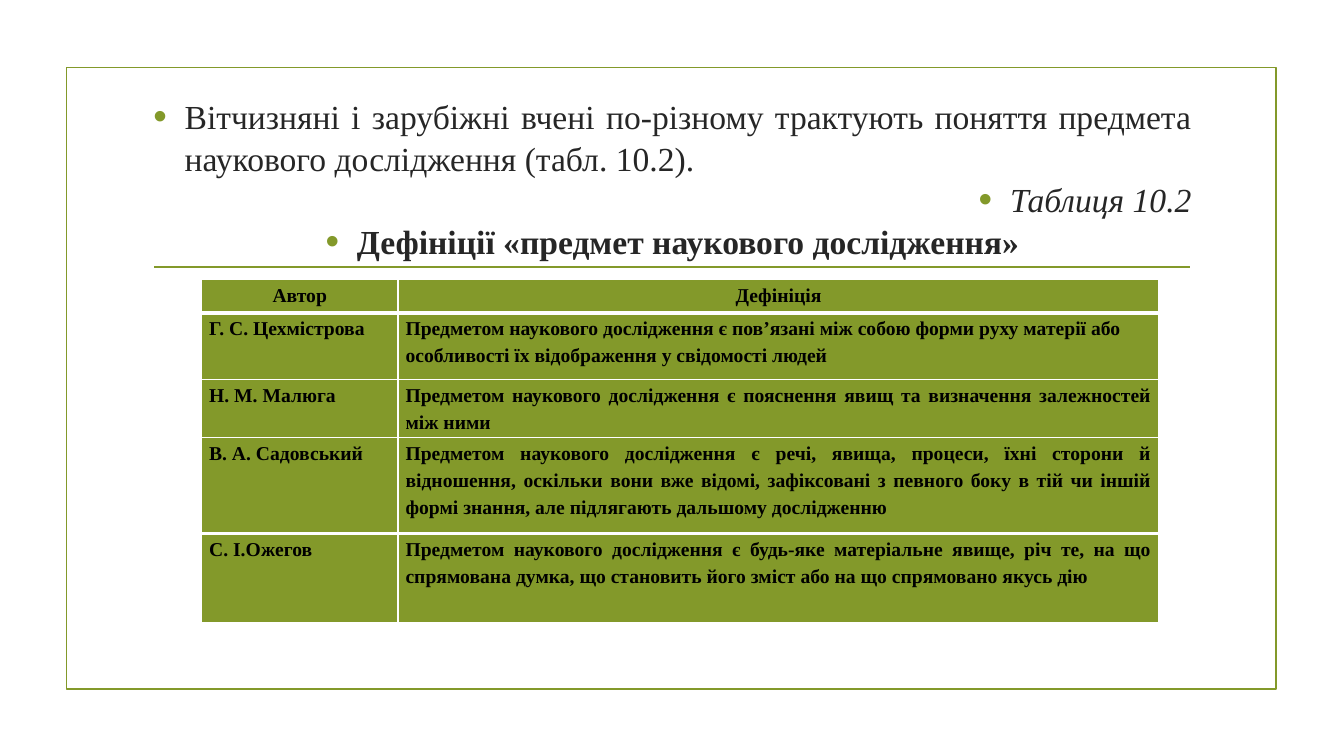
import pptx
import pptx.util
import pptx.dml.color
from lxml import etree
from pptx.enum.shapes import MSO_CONNECTOR, MSO_SHAPE
from pptx.enum.text import MSO_ANCHOR, MSO_AUTO_SIZE, PP_ALIGN
from pptx.oxml.ns import qn

Cm, Pt, RGBColor = pptx.util.Cm, pptx.util.Pt, pptx.dml.color.RGBColor

FONT = "Times New Roman"
OLIVE = RGBColor(0x83, 0x99, 0x2A)
DARK = RGBColor(0x26, 0x26, 0x26)
BLACK = RGBColor(0, 0, 0)
WHITE = RGBColor(255, 255, 255)

INTRO = [
    ("Вітчизняні і зарубіжні вчені по-різному трактують поняття предмета "
     "наукового дослідження (табл. 10.2).", PP_ALIGN.JUSTIFY, False, False),
    ("Таблиця 10.2", PP_ALIGN.RIGHT, False, True),
    ("Дефініції «предмет наукового дослідження»", PP_ALIGN.CENTER, True, False),
]
HEADER = ("Автор", "Дефініція")
DEFINITIONS = [
    ("Г. С. Цехмістрова",
     "Предметом наукового дослідження є пов’язані між собою форми руху матерії "
     "або особливості їх відображення у свідомості людей", PP_ALIGN.LEFT),
    ("Н. М. Малюга",
     "Предметом наукового дослідження є пояснення явищ та визначення "
     "залежностей між ними", PP_ALIGN.JUSTIFY),
    ("В. А. Садовський",
     "Предметом наукового дослідження є речі, явища, процеси, їхні сторони й "
     "відношення, оскільки вони вже відомі, зафіксовані з певного боку в тій чи "
     "іншій формі знання, але підлягають дальшому дослідженню", PP_ALIGN.JUSTIFY),
    ("С. І.Ожегов",
     "Предметом наукового дослідження є будь-яке матеріальне явище, річ те, на "
     "що спрямована думка, що становить його зміст або на що спрямовано якусь "
     "дію", PP_ALIGN.JUSTIFY),
]
COL_WIDTHS = (4.95, 19.18)
ROW_HEIGHTS = (0.84, 1.68, 1.47, 2.41, 2.26)


def format_runs(p, size, color, bold=False, italic=False):
    for r in p.runs:
        r.font.name = FONT
        r.font.size = Pt(size)
        r.font.color.rgb = color
        r.font.bold = bold
        r.font.italic = italic


def add_bullet(p):
    pPr = p._p.get_or_add_pPr()
    pPr.set("marL", str(Cm(0.79)))
    pPr.set("indent", str(-Cm(0.79)))
    color = etree.SubElement(pPr, qn("a:buClr"))
    etree.SubElement(color, qn("a:srgbClr"), val=str(OLIVE))
    etree.SubElement(pPr, qn("a:buSzPct"), val="115000")
    etree.SubElement(pPr, qn("a:buFont"), typeface="Arial")
    etree.SubElement(pPr, qn("a:buChar"), char="•")


def set_borders(cell, top, bottom):
    tcPr = cell._tc.get_or_add_tcPr()
    for side, width in (("L", 1), ("R", 1), ("T", top), ("B", bottom)):
        ln = etree.SubElement(tcPr, qn(f"a:ln{side}"), w=str(Pt(width)))
        fill = etree.SubElement(ln, qn("a:solidFill"))
        etree.SubElement(fill, qn("a:srgbClr"), val=str(WHITE))


def add_frame(s):
    sp = s.shapes.add_shape(MSO_SHAPE.RECTANGLE, Cm(1.68), Cm(1.7), Cm(30.48), Cm(15.67))
    sp.shadow.inherit = False
    sp.fill.background()
    rule = s.shapes.add_connector(MSO_CONNECTOR.STRAIGHT, Cm(3.89), Cm(6.73), Cm(30), Cm(6.73))
    etree.SubElement(rule._element.spPr, qn("a:effectLst"))
    for shape in (sp, rule):
        shape.line.color.rgb = OLIVE
        shape.line.width = Pt(1.25)


def fill_intro(body):
    body.left, body.top, body.width, body.height = Cm(3.61), Cm(2.24), Cm(26.67), Cm(14.1)
    tf = body.text_frame
    tf.auto_size = MSO_AUTO_SIZE.NONE
    tf.vertical_anchor = MSO_ANCHOR.TOP
    tf.text = "\n".join(text for text, *_ in INTRO)
    for p, (_, align, bold, italic) in zip(tf.paragraphs, INTRO):
        p.alignment = align
        p.line_spacing = 1.04
        p.space_before = Pt(0)
        add_bullet(p)
        format_runs(p, 24, DARK, bold, italic)


def add_definitions(s):
    rows = [(*HEADER, PP_ALIGN.CENTER)] + DEFINITIONS
    last = len(rows) - 1
    table = s.shapes.add_table(len(rows), len(HEADER), Cm(5.08), Cm(7.04),
                               Cm(sum(COL_WIDTHS)), Cm(sum(ROW_HEIGHTS))).table
    table.horz_banding = False
    for col, width in zip(table.columns, COL_WIDTHS):
        col.width = Cm(width)
    for i, (author, definition, align) in enumerate(rows):
        table.rows[i].height = Cm(ROW_HEIGHTS[i])
        author_align = PP_ALIGN.CENTER if i == 0 else PP_ALIGN.LEFT
        for j, (text, al) in enumerate(((author, author_align), (definition, align))):
            cell = table.cell(i, j)
            cell.margin_left = cell.margin_right = Cm(0.19)
            cell.margin_top = cell.margin_bottom = 0
            set_borders(cell, 3 if i in (1, last) else 1, 3 if i in (0, last - 1) else 1)
            cell.fill.solid()
            cell.fill.fore_color.rgb = OLIVE
            cell.text_frame.text = text
            p = cell.text_frame.paragraphs[0]
            p.alignment = al
            p.line_spacing = 1.25
            format_runs(p, 14, BLACK, bold=True)


def main():
    prs = pptx.Presentation()
    prs.slide_width, prs.slide_height = Cm(33.87), Cm(19.05)
    s = prs.slides.add_slide(prs.slide_layouts[1])
    title = s.shapes.title._element
    title.getparent().remove(title)
    add_frame(s)
    fill_intro(s.placeholders[1])
    add_definitions(s)
    prs.save("out.pptx")


if __name__ == "__main__":
    main()
